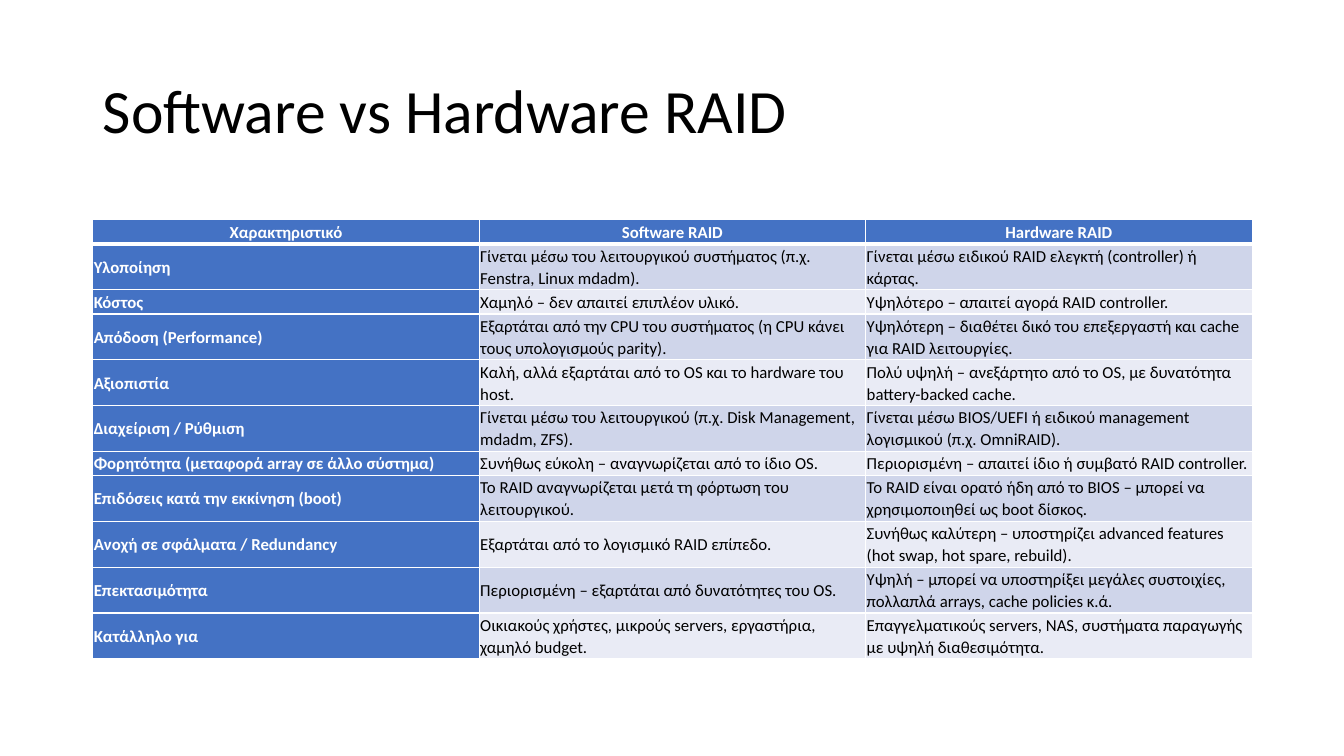
from lxml.etree import SubElement
from pptx import Presentation
from pptx.dml.color import RGBColor
from pptx.enum.text import MSO_ANCHOR, MSO_AUTO_SIZE, PP_ALIGN
from pptx.oxml import parse_xml
from pptx.oxml.ns import nsdecls, qn
from pptx.util import Inches, Pt

FONT = "Calibri"
BLUE, WHITE, BLACK = "4472C4", "FFFFFF", "000000"
BANDS = ("CFD5EA", "E9EBF5")
ONE_LINE, TWO_LINES = 0.24, 0.45

HEADER = ("Χαρακτηριστικό", "Software RAID", "Hardware RAID")
FEATURES = [
    (TWO_LINES, "Υλοποίηση",
     "Γίνεται μέσω του λειτουργικού συστήματος (π.χ. Fenstra, Linux mdadm).",
     "Γίνεται μέσω ειδικού RAID ελεγκτή (controller) ή κάρτας."),
    (ONE_LINE, "Κόστος",
     "Χαμηλό – δεν απαιτεί επιπλέον υλικό.",
     "Υψηλότερο – απαιτεί αγορά RAID controller."),
    (TWO_LINES, "Απόδοση (Performance)",
     "Εξαρτάται από την CPU του συστήματος (η CPU κάνει τους υπολογισμούς parity).",
     "Υψηλότερη – διαθέτει δικό του επεξεργαστή και cache για RAID λειτουργίες."),
    (TWO_LINES, "Αξιοπιστία",
     "Καλή, αλλά εξαρτάται από το OS και το hardware του host.",
     "Πολύ υψηλή – ανεξάρτητο από το OS, με δυνατότητα battery-backed cache."),
    (TWO_LINES, "Διαχείριση / Ρύθμιση",
     "Γίνεται μέσω του λειτουργικού (π.χ. Disk Management, mdadm, ZFS).",
     "Γίνεται μέσω BIOS/UEFI ή ειδικού management λογισμικού (π.χ. OmniRAID)."),
    (ONE_LINE, "Φορητότητα (μεταφορά array σε άλλο σύστημα)",
     "Συνήθως εύκολη – αναγνωρίζεται από το ίδιο OS.",
     "Περιορισμένη – απαιτεί ίδιο ή συμβατό RAID controller."),
    (TWO_LINES, "Επιδόσεις κατά την εκκίνηση (boot)",
     "Το RAID αναγνωρίζεται μετά τη φόρτωση του λειτουργικού.",
     "Το RAID είναι ορατό ήδη από το BIOS – μπορεί να χρησιμοποιηθεί ως boot δίσκος."),
    (TWO_LINES, "Ανοχή σε σφάλματα / Redundancy",
     "Εξαρτάται από το λογισμικό RAID επίπεδο.",
     "Συνήθως καλύτερη – υποστηρίζει advanced features (hot swap, hot spare, rebuild)."),
    (TWO_LINES, "Επεκτασιμότητα",
     "Περιορισμένη – εξαρτάται από δυνατότητες του OS.",
     "Υψηλή – μπορεί να υποστηρίξει μεγάλες συστοιχίες, πολλαπλά arrays, cache policies κ.ά."),
    (TWO_LINES, "Κατάλληλο για",
     "Οικιακούς χρήστες, μικρούς servers, εργαστήρια, χαμηλό budget.",
     "Επαγγελματικούς servers, NAS, συστήματα παραγωγής με υψηλή διαθεσιμότητα."),
]


def rgb(color):
    return RGBColor.from_string(color)


def add_run(p, text, size, color, bold=False):
    r = p.add_run()
    r.text = text
    r.font.name = FONT
    r.font.size = Pt(size)
    r.font.bold = bold
    r.font.color.rgb = rgb(color)


def set_borders(cell, widths):
    tcPr = cell._tc.get_or_add_tcPr()
    for i, (side, width) in enumerate(zip("LRTB", widths)):
        ln = parse_xml(f'<a:ln{side} {nsdecls("a")} w="{Pt(width)}"/>')
        fill = SubElement(ln, qn("a:solidFill"))
        SubElement(fill, qn("a:srgbClr")).set("val", WHITE)
        tcPr.insert(i, ln)


def add_title(s, text, x, y, w, h):
    title = s.shapes.title
    title.left, title.top = Inches(x), Inches(y)
    title.width, title.height = Inches(w), Inches(h)
    tf = title.text_frame
    tf.word_wrap = True
    tf.auto_size = MSO_AUTO_SIZE.NONE
    tf.vertical_anchor = MSO_ANCHOR.MIDDLE
    p = tf.paragraphs[0]
    p.alignment = PP_ALIGN.LEFT
    p.line_spacing = 0.9
    add_run(p, text, 44, BLACK)


def fill_cell(cell, text, row, col):
    cell.margin_left = cell.margin_right = Inches(0.01)
    cell.margin_top = cell.margin_bottom = Inches(0.01)
    cell.vertical_anchor = MSO_ANCHOR.MIDDLE
    heading = row == 0 or col == 0
    cell.fill.solid()
    cell.fill.fore_color.rgb = rgb(BLUE if heading else BANDS[(row - 1) % 2])
    set_borders(cell, (1, 1, 3 if row == 1 else 1, 3 if row == 0 else 1))
    p = cell.text_frame.paragraphs[0]
    p.alignment = PP_ALIGN.CENTER if row == 0 else PP_ALIGN.LEFT
    p.line_spacing = 1.07
    p.space_after = Pt(8)
    add_run(p, text, 12, WHITE if heading else BLACK, heading)


def add_comparison(s, x, y, w):
    rows = [(ONE_LINE, *HEADER), *FEATURES]
    height = sum(row[0] for row in rows)
    table = s.shapes.add_table(len(rows), len(HEADER), Inches(x), Inches(y),
                               Inches(w), Inches(height)).table
    table.first_col = True
    for i, (row_height, *texts) in enumerate(rows):
        table.rows[i].height = Inches(row_height)
        for j, text in enumerate(texts):
            fill_cell(table.cell(i, j), text, i, j)


def main():
    prs = Presentation()
    prs.slide_width, prs.slide_height = Inches(13.33), Inches(7.5)
    s = prs.slides.add_slide(prs.slide_layouts[5])
    add_title(s, "Software vs Hardware RAID", 0.92, 0.4, 11.5, 1.45)
    add_comparison(s, 0.92, 2.18, 11.5)
    prs.save("out.pptx")


if __name__ == "__main__":
    main()
